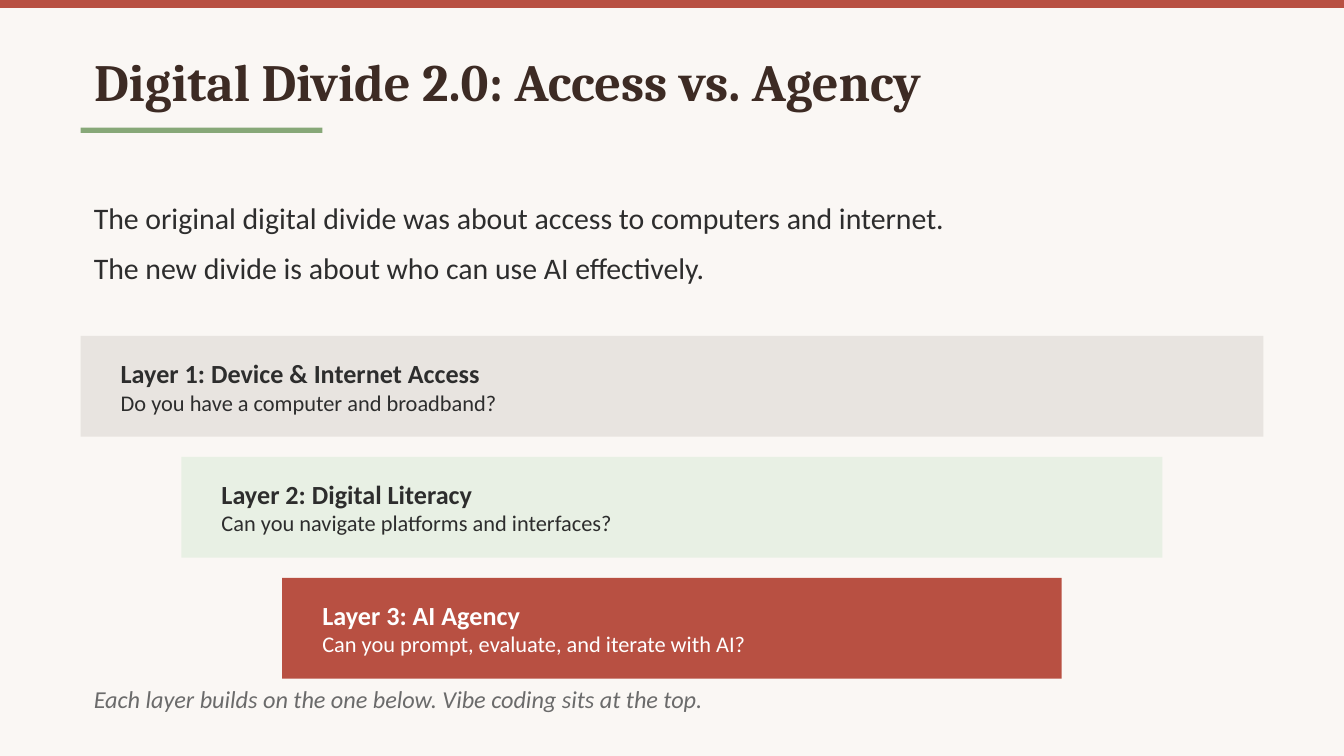
from pptx import Presentation
from pptx import util as u
from pptx.dml.color import RGBColor
from pptx.enum import shapes, text

deck = Presentation()
deck.slide_width = u.Inches(10)
deck.slide_height = u.Inches(10) * 9 // 16
slide = deck.slides.add_slide(deck.slide_layouts[5])


def paint(fill, shade):
    fill.solid()
    fill.fore_color.rgb = RGBColor.from_string(shade)


def write(box, place, lines, space=None):
    """Place a box and fill it with (words, font values) lines."""
    box.left, box.top, box.width, box.height = map(u.Inches, place)
    frame = box.text_frame
    frame.word_wrap = True
    frame.auto_size = text.MSO_AUTO_SIZE.NONE
    frame.vertical_anchor = text.MSO_ANCHOR.MIDDLE
    for i, (words, style) in enumerate(lines):
        para = frame.add_paragraph() if i else frame.paragraphs[0]
        para.alignment = text.PP_ALIGN.LEFT
        para.line_spacing = space
        run = para.add_run()
        run.text = words
        for key, value in style.items():
            if key == "color":
                paint(run.font.fill, value)
            else:
                setattr(run.font, key, value)


# Background
paint(slide.background.fill, "FAF7F4")

# Layers: each one is inset further than the one above
left, wide, step = 0.6, 8.8, 0.75
layers = [
    ("Layer 1: Device & Internet Access",
     "Do you have a computer and broadband?", "E8E4E0", "2D2D2D"),
    ("Layer 2: Digital Literacy",
     "Can you navigate platforms and interfaces?", "E8F0E4", "2D2D2D"),
    ("Layer 3: AI Agency",
     "Can you prompt, evaluate, and iterate with AI?", "B85042", "FFFFFF"),
]
bars = [(0, 0, 10, 0.06, "B85042"), (left, 0.95, 1.8, 0.04, "87A878")]
for i, layer in enumerate(layers):
    bars.append((left + i * step, 2.5 + i * 0.9,
                 wide - 2 * i * step, 0.75, layer[2]))

# Top band, title rule and layer bars
for *place, shade in bars:
    bar = slide.shapes.add_shape(shapes.MSO_SHAPE.RECTANGLE,
                                 *map(u.Inches, place))
    bar.shadow.inherit = False
    bar.line.fill.background()
    paint(bar.fill, shade)

# Title
write(slide.shapes.title, (left, 0.25, wide, 0.7), [
    ("Digital Divide 2.0: Access vs. Agency",
     {"name": "Cambria", "size": u.Pt(28), "bold": True, "color": "3D2B24"}),
])

# Intro, layer texts and closing note
body = {"name": "Calibri", "size": u.Pt(16), "color": "2D2D2D"}
note = {"name": "Calibri", "size": u.Pt(13), "italic": True, "color": "6B6B6B"}
blocks = [((left, 1.3, wide, 0.9), [
    ("The original digital divide was about access to computers and internet.",
     body),
    ("The new divide is about who can use AI effectively.", body),
], 1.4)]
for (head, ask, _, ink), (x, y, w, h, _) in zip(layers, bars[2:]):
    base = {"name": "Calibri", "color": ink}
    blocks.append(((x + 0.2, y, w - 0.4, h), [
        (head, {**base, "size": u.Pt(14), "bold": True}),
        (ask, {**base, "size": u.Pt(12)}),
    ], None))
blocks.append(((left, 5, wide, 0.4), [
    ("Each layer builds on the one below. Vibe coding sits at the top.", note),
], None))
for place, lines, space in blocks:
    write(slide.shapes.add_textbox(0, 0, 0, 0), place, lines, space)

deck.save("out.pptx")
